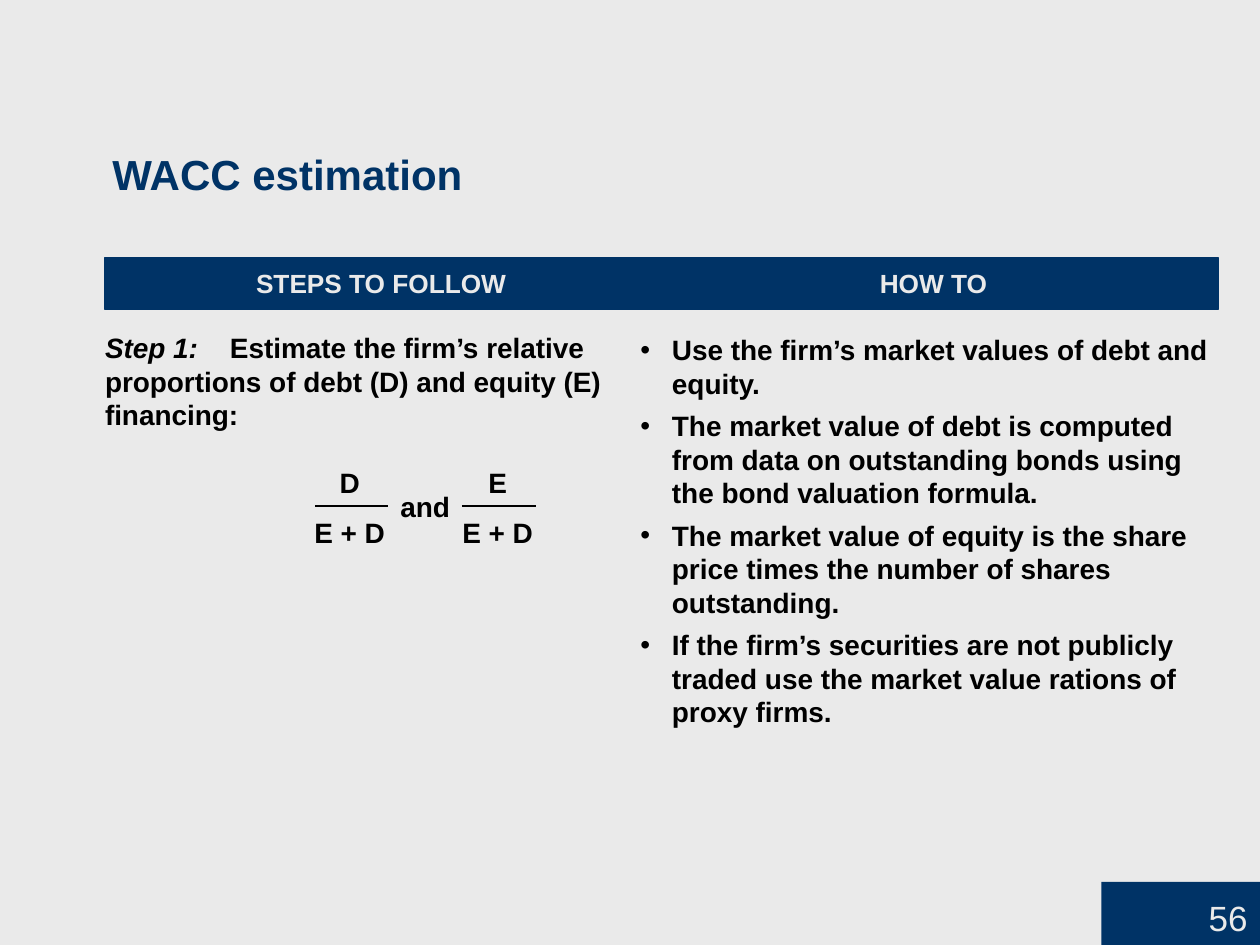
from dataclasses import dataclass

from lxml.etree import SubElement
from pptx import Presentation
from pptx.dml.color import RGBColor
from pptx.enum.shapes import MSO_CONNECTOR, MSO_SHAPE
from pptx.enum.text import MSO_ANCHOR, PP_ALIGN
from pptx.oxml.ns import qn
from pptx.util import Inches, Pt

COLORS = {"paper": "EAEAEA", "navy": "003366", "ink": "000000"}
FONT = "Arial"
COLS, ROWS = 120, 90

prs = Presentation()
prs.slide_width, prs.slide_height = Inches(10), Inches(7.5)
COL, ROW = prs.slide_width / COLS, prs.slide_height / ROWS


@dataclass(frozen=True)
class Box:
    """A place on the slide, in grid columns and rows."""
    col: float
    row: float
    cols: float
    rows: float

    def emu(self) -> tuple:
        return (round(self.col * COL), round(self.row * ROW),
                round(self.cols * COL), round(self.rows * ROW))


@dataclass(frozen=True)
class Fraction:
    top: str
    bottom: str
    center: float  # tab stop, in columns from the text's left edge
    bar: float     # first column of the fraction bar


TITLE = Box(9.5, 13.5, 56.6, 6)
HEADER = Box(10, 24.5, 106, 5)
STEP = Box(10, 31.5, 50, 28)
HOW_TO = Box(61, 31.7, 55, 38)
AND = Box(37, 46, 7, 4.4)
PAGE = Box(104.9, 84, 15.1, 6)
BAR_ROW, BAR_COLS = 48.2, 7

FRACTIONS = [Fraction("D", "E + D", 23.3, 30), Fraction("E", "E + D", 37.4, 44)]
HOW_TO_ITEMS = [
    "Use the firm’s market values of debt and equity.",
    "The market value of debt is computed from data on outstanding bonds "
    "using the bond valuation formula.",
    "The market value of equity is the share price times the number of "
    "shares outstanding.",
    "If the firm’s securities are not publicly traded use the market value "
    "rations of proxy firms.",
]


def color(name: str) -> RGBColor:
    return RGBColor.from_string(COLORS[name])


def set_frame(tf, inset=0.0, anchor=MSO_ANCHOR.TOP) -> None:
    tf.word_wrap = True
    tf.vertical_anchor = anchor
    tf.margin_left = tf.margin_right = Inches(inset)
    tf.margin_top = tf.margin_bottom = Inches(inset / 2)


def add_text(tf, text: str, *, size=16, ink="ink", bold=True, lead="",
             align=PP_ALIGN.LEFT, line=1.0, after=0, tabs=(), tab_kind="ctr",
             bullet=False) -> None:
    """Add a paragraph, with an optional italic lead-in; tabs are in columns."""
    p = tf.paragraphs[0] if not tf.text else tf.add_paragraph()
    p.alignment, p.line_spacing, p.space_after = align, line, Pt(after)
    p.space_before = Pt(0)
    pPr = p._p.get_or_add_pPr()
    if bullet:
        pPr.set("marL", str(Inches(0.25)))
        pPr.set("indent", str(-Inches(0.25)))
        SubElement(pPr, qn("a:buFont"), typeface=FONT)
        SubElement(pPr, qn("a:buChar"), char="•")
    if tabs:
        tab_list = SubElement(pPr, qn("a:tabLst"))
        for tab in tabs:
            SubElement(tab_list, qn("a:tab"), pos=str(round(tab * COL)), algn=tab_kind)
    for part, italic in ((lead, True), (text, False)):
        if part:
            r = p.add_run()
            r.text = part
            r.font.name, r.font.size = FONT, Pt(size)
            r.font.bold, r.font.italic = bold, italic
            r.font.color.rgb = color(ink)


def add_panel(box: Box):
    sp = s.shapes.add_shape(MSO_SHAPE.RECTANGLE, *box.emu())
    sp.shadow.inherit = False
    sp.fill.solid()
    sp.fill.fore_color.rgb = color("navy")
    sp.line.fill.background()
    return sp


def add_text_box(box: Box, anchor=MSO_ANCHOR.TOP):
    tf = s.shapes.add_textbox(*box.emu()).text_frame
    set_frame(tf, anchor=anchor)
    return tf


def add_fraction_bar(col: float) -> None:
    x, y, width, _ = Box(col, BAR_ROW, BAR_COLS, 0).emu()
    bar = s.shapes.add_connector(MSO_CONNECTOR.STRAIGHT, x, y, x + width, y)
    bar.line.color.rgb, bar.line.width = color("ink"), Pt(1.5)
    SubElement(bar._element.spPr, qn("a:effectLst"))


s = prs.slides.add_slide(prs.slide_layouts[5])
s.background.fill.solid()
s.background.fill.fore_color.rgb = color("paper")

title = s.shapes.title
title.left, title.top, title.width, title.height = TITLE.emu()
set_frame(title.text_frame, inset=0.1)
add_text(title.text_frame, "WACC estimation", size=24, ink="navy")

header = add_panel(HEADER)
header.line.color.rgb, header.line.width = color("navy"), Pt(0.75)
set_frame(header.text_frame, anchor=MSO_ANCHOR.MIDDLE)
add_text(header.text_frame, "\tSTEPS TO FOLLOW\tHOW TO", size=15, ink="paper",
         tabs=(26.3, 78.9))

step = add_text_box(STEP)
add_text(step, "\tEstimate the firm’s relative proportions of debt (D) and "
         "equity (E) financing:", lead="Step 1:", tabs=(11.9,), tab_kind="l")
centers = [f.center for f in FRACTIONS]
add_text(step, "".join(f"\t{f.top}" for f in FRACTIONS), line=2.0, tabs=centers)
add_text(step, "".join(f"\t{f.bottom}" for f in FRACTIONS), line=1.5, tabs=centers)
for fraction in FRACTIONS:
    add_fraction_bar(fraction.bar)
add_text(add_text_box(AND, MSO_ANCHOR.MIDDLE), "and", align=PP_ALIGN.CENTER)

how_to = add_text_box(HOW_TO)
for item in HOW_TO_ITEMS:
    add_text(how_to, item, bullet=True, after=5)

page = add_panel(PAGE)
set_frame(page.text_frame, inset=0.1, anchor=MSO_ANCHOR.BOTTOM)
add_text(page.text_frame, "56", size=20, ink="paper", bold=False,
         align=PP_ALIGN.RIGHT)

prs.save("out.pptx")
